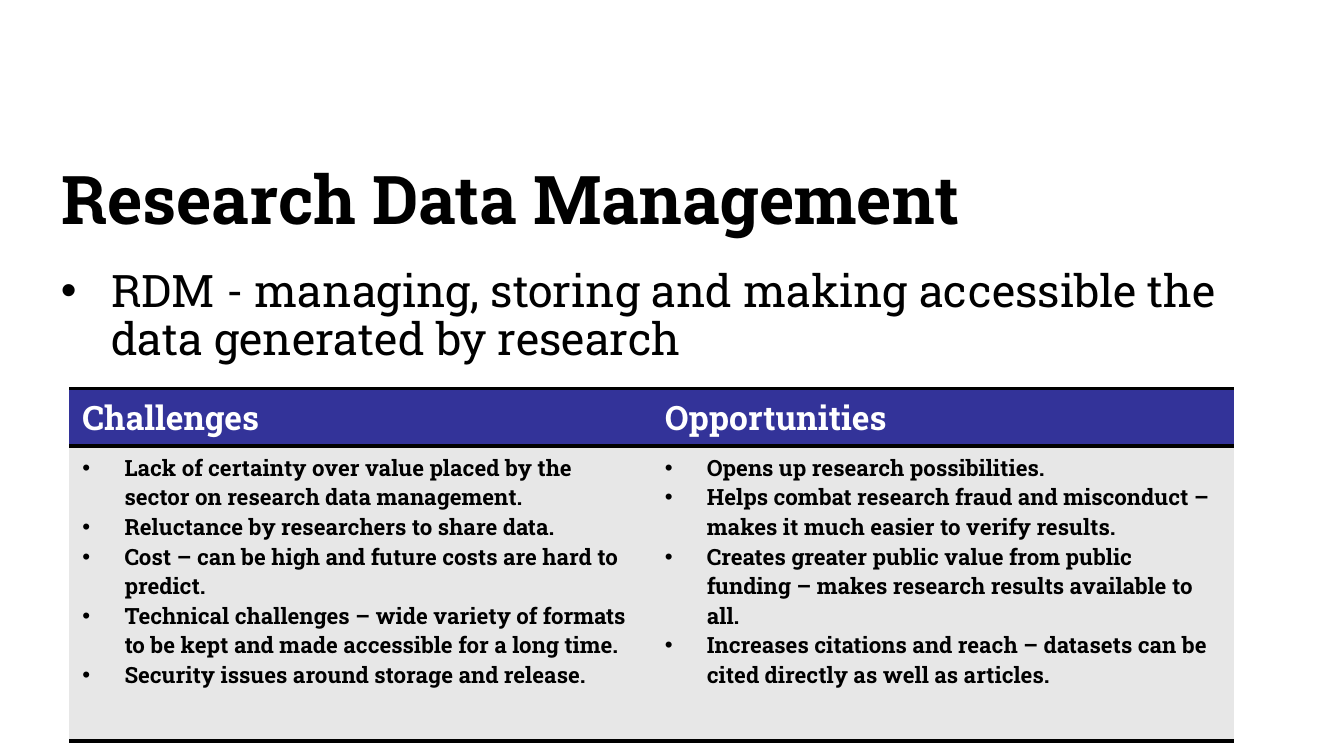
from lxml import etree
from pptx import Presentation
from pptx.dml.color import RGBColor
from pptx.enum.text import MSO_ANCHOR, PP_ALIGN
from pptx.oxml.ns import qn
from pptx.util import Pt

LEFT = PP_ALIGN.LEFT
MIDDLE = MSO_ANCHOR.MIDDLE
BLACK = RGBColor(0, 0, 0)
WHITE = RGBColor(255, 255, 255)
NAVY = RGBColor(0x33, 0x33, 0x99)
GREY = RGBColor(0xE7, 0xE7, 0xE7)
FONT = "Roboto Slab"
TITLE_LAYOUT = 5

TITLE = "Research Data Management"
SUMMARY = "RDM - managing, storing and making accessible the data generated by research"
COLUMNS = {
    "Challenges": [
        "Lack of certainty over value placed by the sector on research data management.",
        "Reluctance by researchers to share data.",
        "Cost – can be high and future costs are hard to predict.",
        "Technical challenges – wide variety of formats to be kept and made accessible for a long time.",
        "Security issues around storage and release.",
    ],
    "Opportunities": [
        "Opens up research possibilities.",
        "Helps combat research fraud and misconduct – makes it much easier to verify results.",
        "Creates greater public value from public funding – makes research results available to all.",
        "Increases citations and reach – datasets can be cited directly as well as articles.",
    ],
}


def place(shape, box):
    """Move a shape to a box of left, top, width and height in points."""
    shape.left, shape.top, shape.width, shape.height = map(Pt, box)


def add_span(para, text, size, color=BLACK, bold=False):
    """Add a formatted run to a left-aligned paragraph."""
    para.alignment = LEFT
    span = para.add_run()
    span.text = text
    span.font.name = FONT
    span.font.size = Pt(size)
    span.font.bold = bold
    span.font.color.rgb = color


def add_bullet(para, indent):
    """Give a paragraph a round bullet with a hanging indent in points."""
    properties = para._p.get_or_add_pPr()
    properties.set("marL", str(Pt(indent)))
    properties.set("indent", str(-Pt(indent)))
    etree.SubElement(properties, qn("a:buFont"), typeface="Arial")
    etree.SubElement(properties, qn("a:buChar"), char="•")


def set_borders(cell):
    """Rule a cell above and below and leave its sides open."""
    properties = cell._tc.get_or_add_tcPr()
    for index, side in enumerate(("lnL", "lnR", "lnT", "lnB")):
        line = etree.Element(qn(f"a:{side}"), w=str(Pt(2)))
        if side in ("lnT", "lnB"):
            fill = etree.SubElement(line, qn("a:solidFill"))
            etree.SubElement(fill, qn("a:srgbClr"), val=str(BLACK))
        else:
            etree.SubElement(line, qn("a:noFill"))
        properties.insert(index, line)


def fill_cell(cell, texts, size, color, background, indent=0):
    """Write one paragraph per text into a filled and ruled cell."""
    cell.fill.solid()
    cell.fill.fore_color.rgb = background
    set_borders(cell)
    frame = cell.text_frame
    for index, text in enumerate(texts):
        para = frame.add_paragraph() if index else frame.paragraphs[0]
        if indent:
            add_bullet(para, indent)
        add_span(para, text, size, color, bold=True)


def add_title(page, box):
    """Place the slide title."""
    title = page.shapes.title
    place(title, box)
    title.text_frame.vertical_anchor = MIDDLE
    add_span(title.text_frame.paragraphs[0], TITLE, 36, bold=True)


def add_summary(page, box):
    """Place the bulleted definition."""
    frame = page.shapes.add_textbox(*map(Pt, box)).text_frame
    frame.word_wrap = True
    para = frame.paragraphs[0]
    para.line_spacing = 0.9
    add_bullet(para, 27)
    add_span(para, SUMMARY, 24)


def add_comparison(page, box, header_height=31):
    """Place the table of challenges and opportunities."""
    table = page.shapes.add_table(2, len(COLUMNS), *map(Pt, box)).table
    table.horz_banding = False
    table.rows[0].height = Pt(header_height)
    table.rows[1].height = Pt(box[3] - header_height)
    for index, (heading, points) in enumerate(COLUMNS.items()):
        table.columns[index].width = Pt(box[2] / len(COLUMNS))
        fill_cell(table.cell(0, index), [heading], 18, WHITE, NAVY)
        fill_cell(table.cell(1, index), points, 12, BLACK, GREY, indent=22.5)


def main():
    """Build and save the deck."""
    deck = Presentation()
    deck.slide_width, deck.slide_height = Pt(720), Pt(405)
    page = deck.slides.add_slide(deck.slide_layouts[TITLE_LAYOUT])
    add_title(page, (25.5, 72, 663, 68))
    add_summary(page, (25.5, 140.5, 663, 67))
    add_comparison(page, (37, 208, 624, 189))
    deck.save("out.pptx")


if __name__ == "__main__":
    main()
